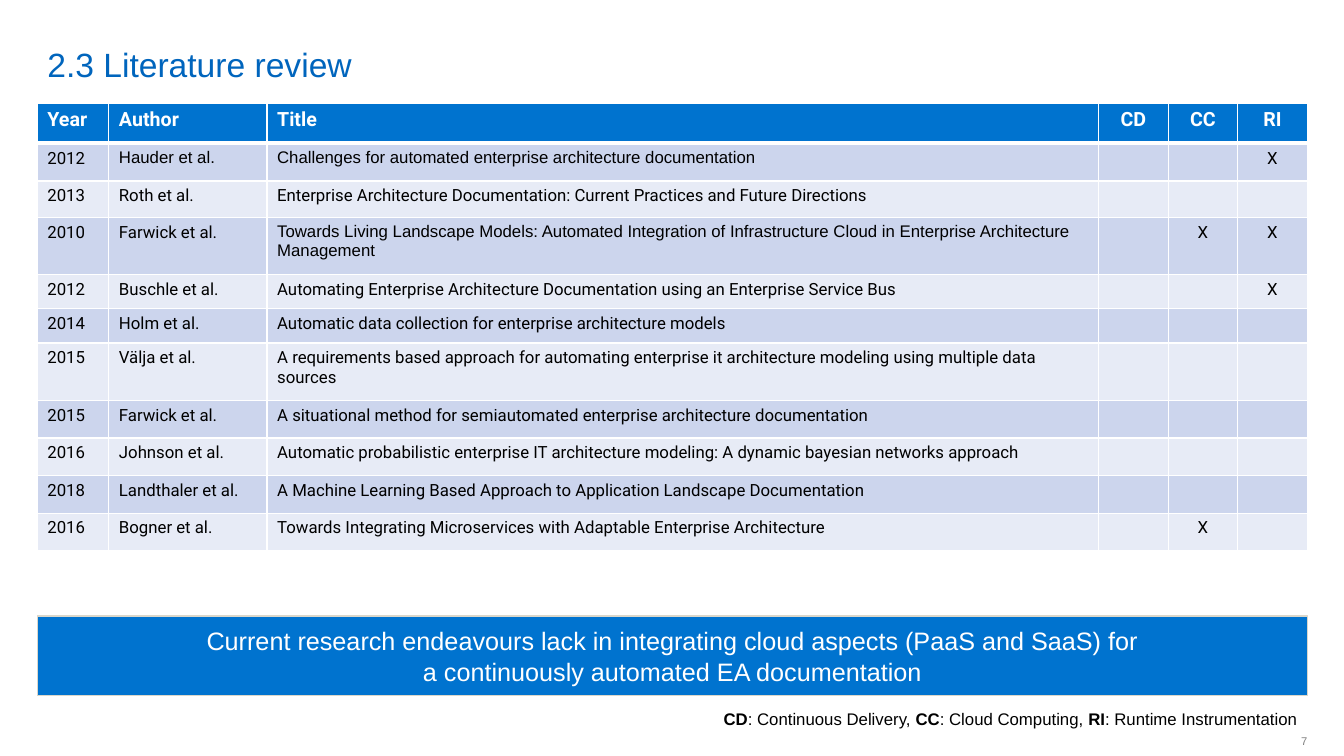
from dataclasses import dataclass

from lxml.etree import SubElement
from pptx import Presentation
from pptx.dml.color import RGBColor
from pptx.enum.shapes import MSO_SHAPE
from pptx.enum.text import MSO_ANCHOR as Anchor, MSO_AUTO_SIZE as AutoSize, PP_ALIGN as Align
from pptx.oxml.ns import qn
from pptx.util import Pt

COLORS = {
    "title": "0065BD",
    "blue": "0073CF",
    "dark_band": "CCD5ED",
    "light_band": "E7EBF6",
    "white": "FFFFFF",
    "black": "000000",
    "gray": "808080",
    "outline": "DAD7CB",
}
LEFT, WIDTH = 26.64, 907.2
COLUMN_WIDTHS = [51.12, 113.04, 594, 49.68, 49.68, 49.68]
HEADINGS = ["Year", "Author", "Title", "CD", "CC", "RI"]
HEADER_HEIGHT = 28.8
FIRST_MARK_COLUMN = 3


@dataclass(frozen=True)
class Paper:
    year: str
    author: str
    title: str
    height: float
    marks: tuple[str, ...] = ()
    author_font: str = "Roboto"
    title_font: str = "Roboto"


PAPERS = [
    Paper("2012", "Hauder et al.", "Challenges for automated enterprise architecture documentation",
          26.9, ("RI",), "Arial", "Arial"),
    Paper("2013", "Roth et al.",
          "Enterprise Architecture Documentation: Current Practices and Future Directions", 26),
    Paper("2010", "Farwick et al.",
          "Towards Living Landscape Models: Automated Integration of Infrastructure Cloud "
          "in Enterprise Architecture Management", 41, ("CC", "RI"), title_font="Arial"),
    Paper("2012", "Buschle et al.",
          "Automating Enterprise Architecture Documentation using an Enterprise Service Bus",
          24.4, ("RI",)),
    Paper("2014", "Holm et al.", "Automatic data collection for enterprise architecture models", 24.4),
    Paper("2015", "Välja et al.",
          "A requirements based approach for automating enterprise it architecture modeling "
          "using multiple data sources", 41),
    Paper("2015", "Farwick et al.",
          "A situational method for semiautomated enterprise architecture documentation", 26.9),
    Paper("2016", "Johnson et al.",
          "Automatic probabilistic enterprise IT architecture modeling: "
          "A dynamic bayesian networks approach", 26.9),
    Paper("2018", "Landthaler et al.",
          "A Machine Learning Based Approach to Application Landscape Documentation", 26.9),
    Paper("2016", "Bogner et al.",
          "Towards Integrating Microservices with Adaptable Enterprise Architecture", 26.9, ("CC",)),
]
LEGEND = {"CD": "Continuous Delivery", "CC": "Cloud Computing", "RI": "Runtime Instrumentation"}


def color(name: str) -> RGBColor:
    return RGBColor.from_string(COLORS[name])


def write(para, text: str, *, size: float, ink: str = "black", font: str = "Arial",
          bold: bool = False, align=Align.LEFT) -> None:
    para.alignment = align
    span = para.add_run()
    span.text = text
    span.font.name = font
    span.font.size = Pt(size)
    span.font.bold = bold
    span.font.color.rgb = color(ink)


def add_text_box(page, left: float, top: float, width: float, height: float):
    box = page.shapes.add_textbox(Pt(left), Pt(top), Pt(width), Pt(height))
    box.text_frame.word_wrap = False
    return box.text_frame


def add_title(page, text: str) -> None:
    title = page.shapes.title
    title.left, title.top, title.width, title.height = Pt(LEFT), Pt(3.6), Pt(833.76), Pt(56.88)
    frame = title.text_frame
    frame.auto_size = AutoSize.NONE
    frame.vertical_anchor = Anchor.BOTTOM
    frame.margin_top = frame.margin_bottom = 0
    write(frame.paragraphs[0], text, size=24, ink="title")


def style_cell(cell, fill: str, top: float, bottom: float) -> None:
    properties = cell._tc.get_or_add_tcPr()
    for side, width in (("L", 1), ("R", 1), ("T", top), ("B", bottom)):
        border = SubElement(properties, qn(f"a:ln{side}"), w=str(Pt(width)))
        solid = SubElement(border, qn("a:solidFill"))
        SubElement(solid, qn("a:srgbClr"), val=COLORS["white"])
    cell.fill.solid()
    cell.fill.fore_color.rgb = color(fill)


def fill_cell(cell, text: str, **text_format) -> None:
    para = cell.text_frame.paragraphs[0]
    if text:
        write(para, text, **text_format)
    else:
        para._p.get_or_add_endParaRPr().set("sz", "1200")


def add_paper_table(page) -> None:
    heights = [HEADER_HEIGHT] + [paper.height for paper in PAPERS]
    table = page.shapes.add_table(len(heights), len(HEADINGS), Pt(LEFT), Pt(73.6),
                                  Pt(WIDTH), Pt(sum(heights))).table
    for column, width in zip(table.columns, COLUMN_WIDTHS):
        column.width = Pt(width)
    for row, height in zip(table.rows, heights):
        row.height = Pt(height)
    aligns = [Align.LEFT] * FIRST_MARK_COLUMN + [Align.CENTER] * 3
    for index, heading in enumerate(HEADINGS):
        cell = table.cell(0, index)
        style_cell(cell, "blue", 1, 3)
        fill_cell(cell, heading, size=14, ink="white", font="Roboto", bold=True, align=aligns[index])
    for number, paper in enumerate(PAPERS, 1):
        marks = ["X" if name in paper.marks else "" for name in HEADINGS[FIRST_MARK_COLUMN:]]
        texts = [paper.year, paper.author, paper.title, *marks]
        fonts = ["Roboto", paper.author_font, paper.title_font] + ["Roboto"] * 3
        for index, (text, font) in enumerate(zip(texts, fonts)):
            cell = table.cell(number, index)
            style_cell(cell, "dark_band" if number % 2 else "light_band", 3 if number == 1 else 1, 1)
            fill_cell(cell, text, size=12, font=font, align=aligns[index])


def add_banner(page, lines: list[str]) -> None:
    banner = page.shapes.add_shape(MSO_SHAPE.RECTANGLE, Pt(LEFT), Pt(440), Pt(WIDTH), Pt(56.88))
    banner.shadow.inherit = False
    banner.fill.solid()
    banner.fill.fore_color.rgb = color("blue")
    banner.line.color.rgb = color("outline")
    banner.line.width = Pt(0.75)
    frame = banner.text_frame
    frame.word_wrap = True
    frame.vertical_anchor = Anchor.MIDDLE
    for index, line in enumerate(lines):
        para = frame.add_paragraph() if index else frame.paragraphs[0]
        write(para, line, size=18, ink="white", align=Align.CENTER)


def add_legend(page) -> None:
    para = add_text_box(page, 506.16, 502.56, 427.68, 21.6).paragraphs[0]
    for index, (short, meaning) in enumerate(LEGEND.items(), 1):
        write(para, short, size=12, bold=True, align=Align.RIGHT)
        ending = ", " if index < len(LEGEND) else ""
        write(para, f": {meaning}{ending}", size=12, align=Align.RIGHT)


def add_page_number(page, number: str) -> None:
    frame = add_text_box(page, 907.2, 517.68, 26.64, 23.04)
    frame.vertical_anchor = Anchor.MIDDLE
    frame.margin_right = 0
    write(frame.paragraphs[0], number, size=8, ink="gray", align=Align.RIGHT)


def main() -> None:
    deck = Presentation()
    deck.slide_width, deck.slide_height = Pt(960), Pt(540)
    page = deck.slides.add_slide(deck.slide_layouts[5])
    add_title(page, "2.3 Literature review")
    add_page_number(page, "7")
    add_paper_table(page)
    add_banner(page, [
        "Current research endeavours lack in integrating cloud aspects (PaaS and SaaS) for",
        "a continuously automated EA documentation",
    ])
    add_legend(page)
    deck.save("out.pptx")


if __name__ == "__main__":
    main()
